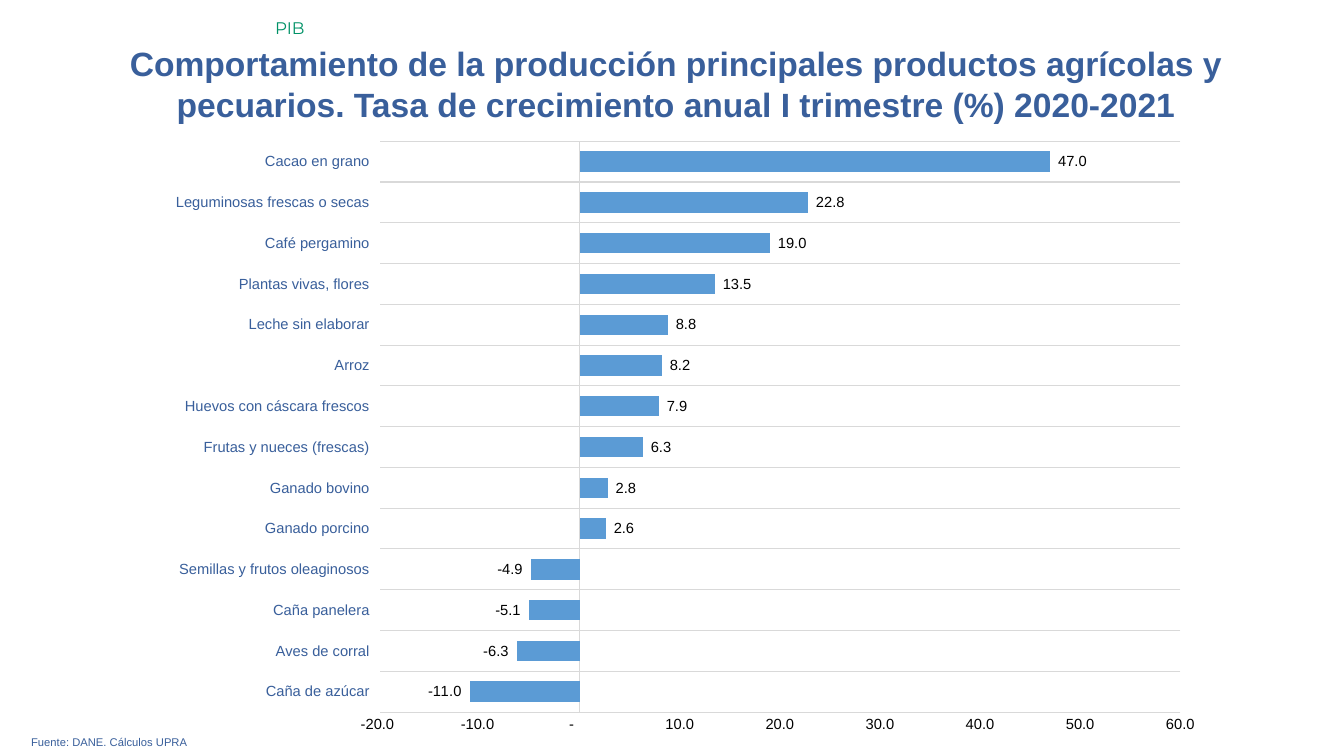
from dataclasses import dataclass

from pptx import Presentation
from pptx.chart.data import CategoryChartData as Data
from pptx.dml.color import RGBColor as RGB
from pptx.enum.chart import XL_CHART_TYPE as Kind
from pptx.enum.chart import XL_LABEL_POSITION as Place
from pptx.enum.chart import XL_TICK_LABEL_POSITION as Side
from pptx.enum.chart import XL_TICK_MARK as Tick
from pptx.enum.text import MSO_ANCHOR as Anchor
from pptx.enum.text import MSO_AUTO_SIZE as Fit
from pptx.enum.text import PP_ALIGN as Align
from pptx.oxml import parse_xml
from pptx.oxml.ns import nsdecls, qn
from pptx.util import Inches, Pt


@dataclass(frozen=True)
class Theme:
    navy: str = "395F9B"
    green: str = "009267"
    bar: str = "5B9BD5"
    grid: str = "D9D9D9"
    black: str = "000000"
    body: str = "Arial"
    accent: str = "Montserrat"
    title: float = 24
    tag: float = 12
    label: float = 10.5
    note: float = 8


THEME = Theme()
FORMAT = '_-* #,##0.0_-;\\-* #,##0.0_-;_-* "-"??_-;'
GROWTH = {
    "Caña de azúcar": -11,
    "Aves de corral": -6.3,
    "Caña panelera": -5.1,
    "Semillas y frutos oleaginosos": -4.9,
    "Ganado porcino": 2.6,
    "Ganado bovino": 2.8,
    "Frutas y nueces (frescas)": 6.3,
    "Huevos con cáscara frescos": 7.9,
    "Arroz": 8.2,
    "Leche sin elaborar": 8.8,
    "Plantas vivas, flores": 13.5,
    "Café pergamino": 19,
    "Leguminosas frescas o secas": 22.8,
    "Cacao en grano": 47,
}


def style(font, size, color, name=THEME.body, bold=False):
    font.size, font.name, font.bold = Pt(size), name, bold
    font.color.rgb = RGB.from_string(color)


def write(shape, text, align, size, color, name=THEME.body, bold=False):
    frame = shape.text_frame
    frame.text = text
    frame.word_wrap = True
    frame.auto_size = Fit.NONE
    frame.vertical_anchor = Anchor.TOP
    par = frame.paragraphs[0]
    par.alignment = align
    style(par.runs[0].font, size, color, name, bold)


def rule(line):
    line.color.rgb = RGB.from_string(THEME.grid)
    line.width = Pt(0.75)


# Title in the template's placeholder
def add_title(slide, box, text):
    title = slide.shapes.title
    title.left, title.top, title.width, title.height = map(Inches, box)
    write(title, text, Align.CENTER, THEME.title, THEME.navy, bold=True)


# Small text: section tag and source
def add_text(slide, box, text, align, size, color, name=THEME.body):
    shape = slide.shapes.add_textbox(*map(Inches, box))
    write(shape, text, align, size, color, name)


# Fix the plot area, as fractions of the chart
def set_plot(chart, **parts):
    area = chart._chartSpace.chart.plotArea
    for old in area.findall(qn("c:layout")):
        area.remove(old)
    sizes = "".join(f'<c:{key} val="{val}"/>' for key, val in parts.items())
    area.insert(0, parse_xml(
        f'<c:layout {nsdecls("c")}><c:manualLayout>'
        '<c:layoutTarget val="inner"/><c:xMode val="edge"/>'
        f'<c:yMode val="edge"/>{sizes}</c:manualLayout></c:layout>'))


# Bar chart of growth by product
def add_bars(slide, box, growth):
    data = Data(number_format=FORMAT)
    data.categories = list(growth)
    data.add_series("Series 1", growth.values())
    frame = slide.shapes.add_chart(
        Kind.BAR_CLUSTERED, *map(Inches, box), data)
    chart = frame.chart
    chart.has_title = chart.has_legend = False
    style(chart.font, THEME.label, THEME.black)
    set_plot(chart, x=0.21, y=0.02, w=0.75, h=0.93)

    # Bars and their values
    plot = chart.plots[0]
    plot.gap_width = 100
    plot.vary_by_categories = False
    bars = plot.series[0]
    bars.invert_if_negative = False
    bars.format.fill.solid()
    bars.format.fill.fore_color.rgb = RGB.from_string(THEME.bar)
    plot.has_data_labels = True
    labels = plot.data_labels
    labels.show_value = True
    labels.position = Place.OUTSIDE_END
    style(labels.font, THEME.label, THEME.black)

    # Axes
    cat, val = chart.category_axis, chart.value_axis
    for axis, color in ((cat, THEME.navy), (val, THEME.black)):
        axis.major_tick_mark = axis.minor_tick_mark = Tick.NONE
        style(axis.tick_labels.font, THEME.label, color)
    cat.tick_label_position = Side.LOW
    cat.has_major_gridlines = True
    rule(cat.major_gridlines.format.line)
    rule(cat.format.line)
    val.has_major_gridlines = False
    val.format.line.fill.background()
    val.minimum_scale, val.maximum_scale, val.major_unit = -20, 60, 10
    for part in (labels, val.tick_labels):
        part.number_format = FORMAT
        part.number_format_is_linked = False


def main():
    deck = Presentation()
    deck.slide_width, deck.slide_height = Inches(13.33), Inches(7.5)
    slide = deck.slides.add_slide(deck.slide_layouts[5])
    add_title(slide, (0.45, 0.38, 12.51, 0.91),
              "Comportamiento de la producción principales productos "
              "agrícolas y pecuarios. Tasa de crecimiento anual "
              "I trimestre (%) 2020-2021")
    add_text(slide, (0.21, 7.25, 12.91, 0.24), "Fuente: DANE. Cálculos UPRA",
             Align.JUSTIFY, THEME.note, THEME.navy)
    add_text(slide, (2.63, 0.13, 10.7, 0.3), "PIB",
             Align.LEFT, THEME.tag, THEME.green, THEME.accent)
    add_bars(slide, (1.54, 1.28, 10.59, 6.09), GROWTH)
    deck.save("out.pptx")


if __name__ == "__main__":
    main()
